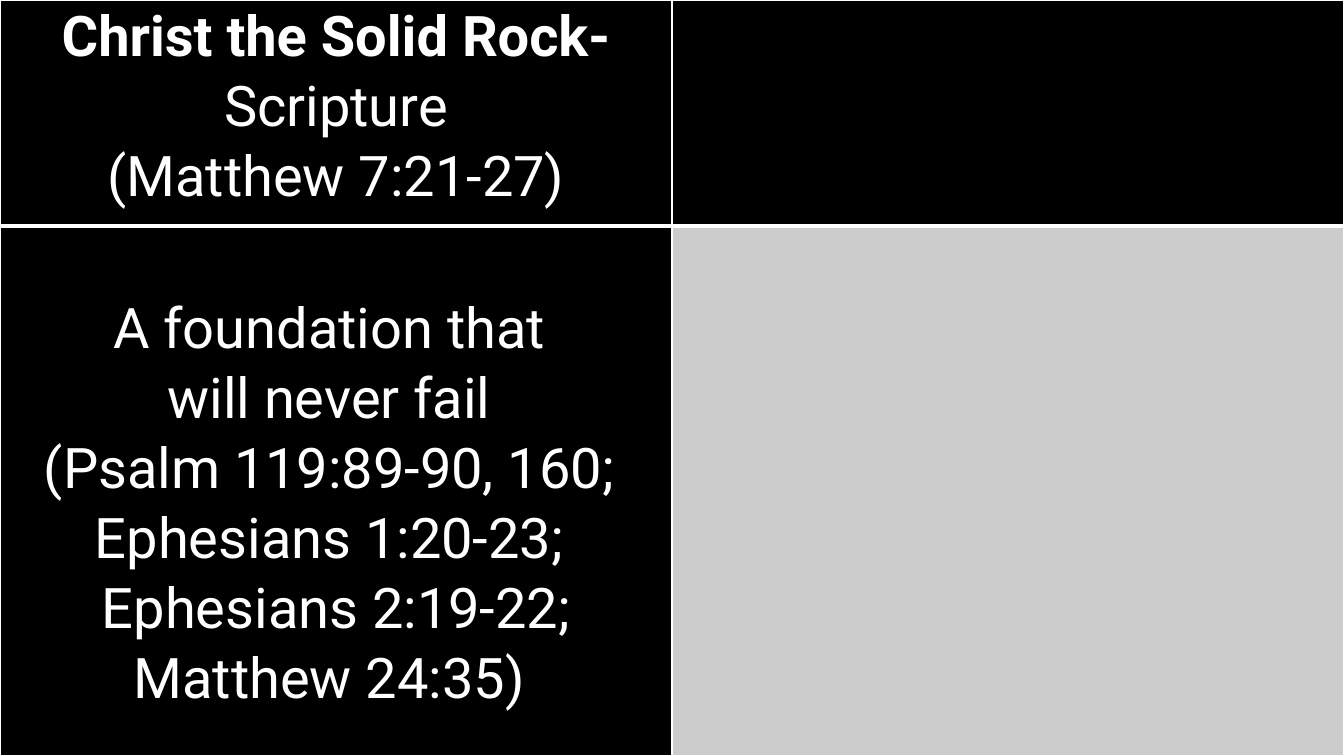
"""Build a two-by-two table slide on the Solid Rock scripture."""
from lxml.etree import SubElement
from pptx import Presentation
from pptx.dml.color import RGBColor
from pptx.enum.text import PP_ALIGN
from pptx.oxml.ns import qn
from pptx.util import Pt

PX = 914400 / 100.8
WIDE, HIGH = 1344, 756
ROWS = [226, 530]
WHITE, BLACK, GREY = "FFFFFF", "000000", "CCCCCC"
FILLS = [[BLACK, BLACK], [BLACK, GREY]]
EDGES = [{"L": 1, "R": 1, "T": 1, "B": 3}, {"L": 1, "R": 1, "T": 3, "B": 1}]


def color(code):
    return RGBColor.from_string(code)


def write(para, text, size=40, bold=False, font="Roboto", code=WHITE):
    para.alignment = PP_ALIGN.CENTER
    para.line_spacing = 1.07
    run = para.add_run()
    run.text = text
    run.font.size = Pt(size)
    run.font.bold = bold
    run.font.name = font
    run.font.color.rgb = color(code)


deck = Presentation()
deck.slide_width, deck.slide_height = round(WIDE * PX), round(HIGH * PX)
slide = deck.slides.add_slide(deck.slide_layouts[6])
slide.background.fill.solid()
slide.background.fill.fore_color.rgb = color(BLACK)

frame = slide.shapes.add_table(2, 2, 0, 0, deck.slide_width, deck.slide_height)
table = frame.table
table.first_row = table.horz_banding = False

for row, (high, fills, edges) in enumerate(zip(ROWS, FILLS, EDGES)):
    table.rows[row].height = round(high * PX)
    for col, fill in enumerate(fills):
        cell = table.cell(row, col)
        cell.margin_left = cell.margin_right = round(7 * PX)
        cell.margin_top = cell.margin_bottom = 0
        props = cell._tc.get_or_add_tcPr()
        for side, width in edges.items():
            line = SubElement(props, qn("a:ln" + side), w=str(Pt(width)))
            paint = SubElement(line, qn("a:solidFill"))
            SubElement(paint, qn("a:srgbClr"), val=WHITE)
        cell.fill.solid()
        cell.fill.fore_color.rgb = color(fill)

title = table.cell(0, 0).text_frame
write(title.paragraphs[0], "Christ the Solid Rock- ", bold=True)
write(title.paragraphs[0], "Scripture")
write(title.add_paragraph(), "(Matthew 7:21-27)")

verses = [
    "A foundation that ",
    "will never fail ",
    "(Psalm 119:89-90, 160; ",
    "Ephesians 1:20-23; ",
    "Ephesians 2:19-22;",
    "Matthew 24:35) ",
]
body = table.cell(1, 0)
body.margin_top = round(66 * PX)
for index, verse in enumerate(verses):
    words = body.text_frame
    write(words.add_paragraph() if index else words.paragraphs[0], verse)

deck.save("out.pptx")
